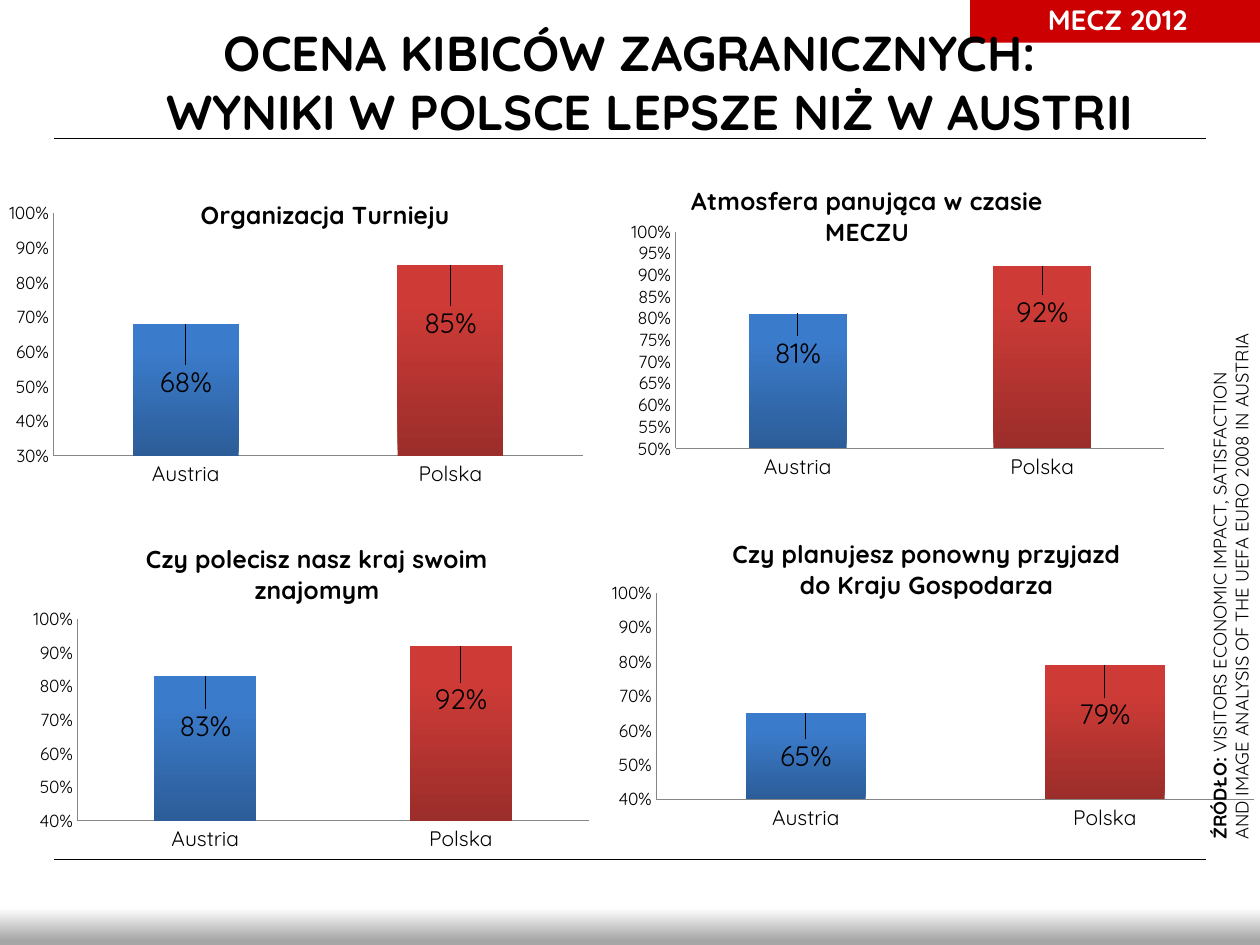
from lxml import etree
from pptx import Presentation
from pptx import util as u
from pptx.chart import data as chart_data
from pptx.dml.color import RGBColor
from pptx.enum import chart as ce, shapes, text
from pptx.oxml.ns import qn

FONT = "Quicksand"
BLACK = RGBColor(0x00, 0x00, 0x00)
WHITE = RGBColor(0xFF, 0xFF, 0xFF)
BADGE_RED = RGBColor(0xCC, 0x00, 0x00)
AXIS_GRAY = RGBColor(0x86, 0x86, 0x86)
BAND_GRAY = RGBColor(0xA6, 0xA6, 0xA6)
# Each bar shades from its dark foot to its light top
BAR_SHADES = (
    (RGBColor(0x2C, 0x5D, 0x98), RGBColor(0x3B, 0x7B, 0xCB)),
    (RGBColor(0x9B, 0x2D, 0x2A), RGBColor(0xCE, 0x3B, 0x37)),
)
COUNTRIES = ("Austria", "Polska")

# box in cm; plot is x, y, w, h and heading is x, y as shares of the chart
RATINGS = (
    dict(box=(0, 2.72, 11.99, 7.19), heading="Organizacja Turnieju",
         values=(0.68, 0.85), low=0.3, step=0.1, heading_at=(0.33, 0.16),
         plot=(0.09, 0.22, 0.89, 0.68), label_drops=(0.1, 0.1)),
    dict(box=(12.5, 3.12, 11.2, 6.73), heading="Atmosfera panująca w czasie MECZU",
         values=(0.81, 0.92), low=0.5, step=0.05, heading_at=(0.12, 0.07),
         plot=(0.1, 0.23, 0.88, 0.65), label_drops=(0.05, 0.07)),
    dict(box=(0.51, 10.31, 11.71, 7.01), heading="Czy polecisz nasz kraj swoim znajomym",
         values=(0.83, 0.92), low=0.4, step=0.1, heading_at=(0.2, 0.07),
         plot=(0.09, 0.31, 0.88, 0.58), label_drops=(0.08, 0.09)),
    dict(box=(12.04, 10.31, 13.26, 6.83),
         heading="Czy planujesz ponowny przyjazd\ndo Kraju Gospodarza",
         values=(0.65, 0.79), low=0.4, step=0.1, heading_at=(0.2, 0.06),
         plot=(0.09, 0.24, 0.91, 0.61), label_drops=(0.06, 0.08)),
)


def cm(box):
    return [u.Cm(length) for length in box]


def assign(target, **values):
    for name, value in values.items():
        setattr(target, name, value)


def style_font(font, size, bold=False, color=BLACK):
    assign(font, name=FONT, size=u.Pt(size), bold=bold)
    font.color.rgb = color


def shade(fill, stops, angle):
    fill.gradient()
    fill.gradient_angle = angle
    for stop, (position, color) in zip(fill.gradient_stops, stops):
        stop.position = position
        stop.color.rgb = color


def place(parent, index, **settings):
    """Give a chart part a manual layout at its place in the schema order."""
    for old in parent.findall(qn("c:layout")):
        parent.remove(old)
    layout = etree.Element(qn("c:layout"))
    manual = etree.SubElement(layout, qn("c:manualLayout"))
    for tag, value in settings.items():
        etree.SubElement(manual, qn(f"c:{tag}")).set("val", str(value))
    parent.insert(index, layout)


def add_rule(slide, left, right, y):
    rule = slide.shapes.add_connector(
        shapes.MSO_CONNECTOR.STRAIGHT, *cm((left, y, right, y)))
    rule.line.color.rgb = BLACK
    rule.line.width = u.Pt(0.75)
    etree.SubElement(rule.element.spPr, qn("a:effectLst"))


def add_block(slide, box):
    block = slide.shapes.add_shape(shapes.MSO_SHAPE.RECTANGLE, *cm(box))
    block.shadow.inherit = False
    block.line.fill.background()
    return block


def add_footer_band(slide, box):
    band = add_block(slide, box)
    shade(band.fill, ((0.58, WHITE), (0.95, BAND_GRAY)), 270)


def add_badge(slide, box):
    badge = add_block(slide, box)
    badge.fill.solid()
    badge.fill.fore_color.rgb = BADGE_RED
    badge.text_frame.vertical_anchor = text.MSO_ANCHOR.MIDDLE
    line = badge.text_frame.paragraphs[0]
    line.text = "MECZ 2012"
    line.alignment = text.PP_ALIGN.CENTER
    style_font(line.runs[0].font, 16, True, WHITE)


def add_headline(slide, box):
    frame = slide.shapes.add_textbox(*cm(box)).text_frame
    assign(frame, word_wrap=True, vertical_anchor=text.MSO_ANCHOR.MIDDLE)
    headline = frame.paragraphs[0]
    headline.text = "OCENA KIBICÓW ZAGRANICZNYCH:\vWYNIKI W POLSCE LEPSZE NIŻ W AUSTRII"
    headline.alignment = text.PP_ALIGN.CENTER
    # Hanging indent
    indent = u.Cm(0.79)
    properties = headline._p.get_or_add_pPr()
    properties.set("marL", str(indent))
    properties.set("indent", str(-indent))
    for run in headline.runs:
        style_font(run.font, 28, True)


def add_rating(slide, box, heading, values, low, step, heading_at, plot, label_drops):
    scores = chart_data.CategoryChartData(number_format="0%")
    scores.categories = COUNTRIES
    scores.add_series("Series 1", values)
    chart = slide.shapes.add_chart(
        ce.XL_CHART_TYPE.COLUMN_CLUSTERED, *cm(box), scores).chart
    chart.has_legend = False
    style_font(chart.font, 10)

    # Heading
    chart.has_title = True
    title = chart.chart_title
    title.include_in_layout = False
    title.text_frame.text = heading
    for line in title.text_frame.paragraphs:
        style_font(line.runs[0].font, 14, True)
    place(title.element, 1, xMode="edge", yMode="edge",
          x=heading_at[0], y=heading_at[1])

    # Axes and plot area
    for axis, size in ((chart.category_axis, 12), (chart.value_axis, 10)):
        assign(axis, has_major_gridlines=False,
               major_tick_mark=ce.XL_TICK_MARK.NONE,
               minor_tick_mark=ce.XL_TICK_MARK.NONE)
        axis.format.line.color.rgb = AXIS_GRAY
        axis.format.line.width = u.Pt(0.75)
        style_font(axis.tick_labels.font, size)
    assign(chart.value_axis, minimum_scale=low, maximum_scale=1, major_unit=step)
    assign(chart.value_axis.tick_labels, number_format="0%",
           number_format_is_linked=False)
    x, y, w, h = plot
    place(chart.element.find(".//" + qn("c:plotArea")), 0, layoutTarget="inner",
          xMode="edge", yMode="edge", x=x, y=y, w=w, h=h)

    # Bars and their labels
    bars = chart.plots[0]
    assign(bars, gap_width=150, vary_by_categories=False)
    series = bars.series[0]
    series.invert_if_negative = False
    for index, (foot, top) in enumerate(BAR_SHADES):
        point = series.points[index]
        shade(point.format.fill, ((0, foot), (0.8, top)), 90)
        style_font(point.data_label.font, 16)
        point.data_label.position = ce.XL_LABEL_POSITION.INSIDE_END
    for label, drop in zip(chart.element.iter(qn("c:dLbl")), label_drops):
        place(label, 1, x=0, y=drop)


def add_source(slide, box):
    source = slide.shapes.add_textbox(*cm(box))
    source.rotation = 270
    frame = source.text_frame
    frame.word_wrap = False
    lines = (
        (("ŹRÓDŁO:", True), (" VISITORS ECONOMIC IMPACT, SATISFACTION", False)),
        (("AND IMAGE ANALYSIS OF THE UEFA EURO 2008 IN AUSTRIA", False),),
    )
    for index, parts in enumerate(lines):
        line = frame.add_paragraph() if index else frame.paragraphs[0]
        for words, bold in parts:
            run = line.add_run()
            run.text = words
            style_font(run.font, 10.5, bold)


def main():
    deck = Presentation()
    assign(deck, slide_width=u.Cm(25.4), slide_height=u.Cm(19.05))
    slide = deck.slides.add_slide(deck.slide_layouts[6])
    add_rule(slide, 1.09, 24.31, 2.79)
    add_footer_band(slide, (0, 17.27, 25.4, 1.78))
    add_rule(slide, 1.09, 24.31, 17.32)
    add_badge(slide, (19.56, -0.08, 5.94, 0.94))
    add_headline(slide, (1.27, 0.76, 22.86, 1.75))
    for rating in RATINGS:
        add_rating(slide, **rating)
    add_source(slide, (19.38, 11.18, 10.85, 1.14))
    deck.save("out.pptx")


if __name__ == "__main__":
    main()
